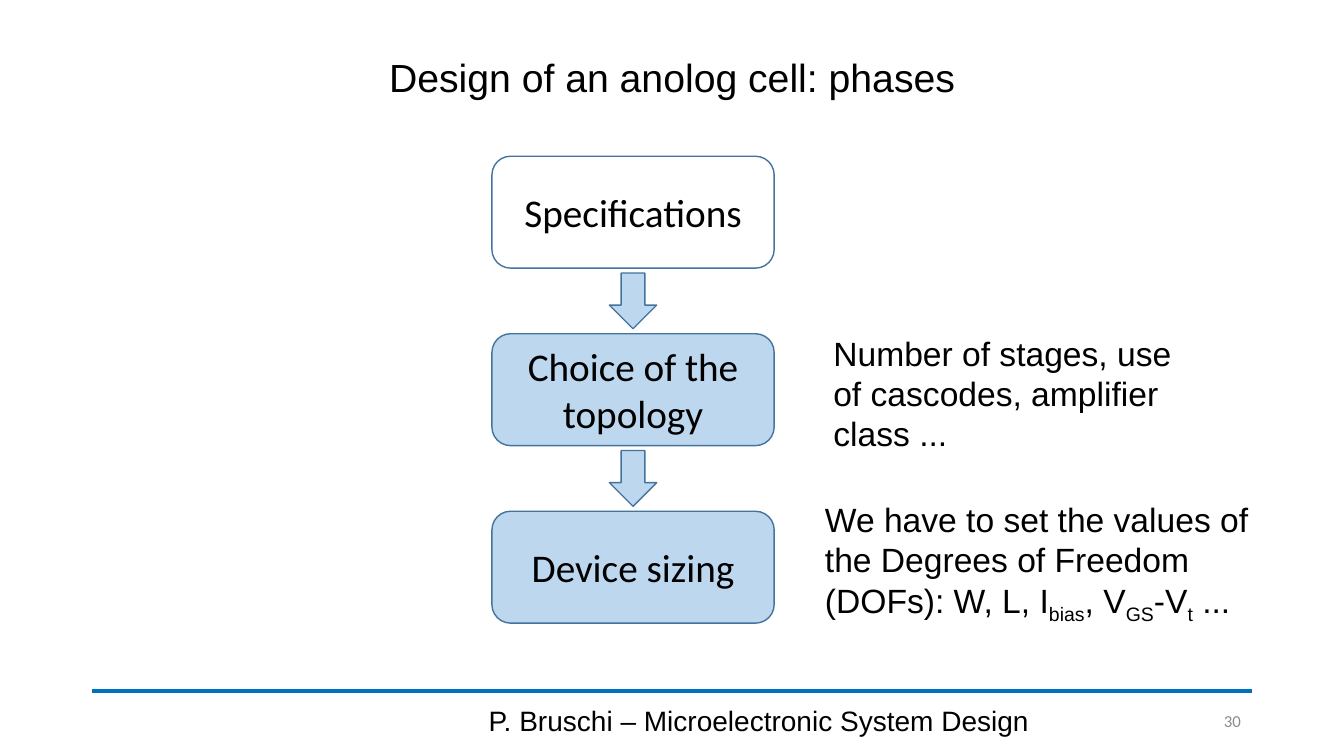
from pptx import Presentation
from pptx.dml.color import RGBColor
from pptx.enum.shapes import MSO_CONNECTOR, MSO_SHAPE
from pptx.enum.text import MSO_ANCHOR, PP_ALIGN
from pptx.oxml.ns import qn
from pptx.util import Pt
from lxml import etree

LEFT, CENTER, RIGHT = PP_ALIGN.LEFT, PP_ALIGN.CENTER, PP_ALIGN.RIGHT
TOP, MIDDLE = MSO_ANCHOR.TOP, MSO_ANCHOR.MIDDLE

COLORS = {"rule": "0070C0", "fill": "BDD7EE", "outline": "43739E",
          "text": "000000", "number": "8C8C8C"}

# Phase name, fill colour key
PHASES = [("Specifications", None),
          ("Choice of the topology", "fill"),
          ("Device sizing", "fill")]

# Box (left, top, width, height), runs (text, is subscript), size, font, colour, align, anchor
TEXTS = [
    ((66, 28.8, 828, 51.8), [("Design of an anolog cell: phases", False)],
     28, "Arial", "text", CENTER, MIDDLE),
    ((588.2, 234, 270.7, 94.3),
     [("Number of stages, use of cascodes, amplifier class ...", False)],
     24, "Arial", "text", LEFT, TOP),
    ((582.2, 352.8, 321.1, 94.3),
     [("We have to set the values of the Degrees of Freedom (DOFs): W, L, I", False),
      ("bias", True), (", V", False), ("GS", True), ("-V", False), ("t", True),
      (" ...", False)],
     24, "Arial", "text", LEFT, TOP),
    ((318.2, 500.4, 447.8, 28.8), [("P. Bruschi – Microelectronic System Design", False)],
     20, "Arial", "text", CENTER, MIDDLE),
    ((824.4, 500.4, 69.1, 28.8), [("30", False)],
     12, "Calibri", "number", RIGHT, MIDDLE),
]

BOX_LEFT, BOX_TOP, BOX_W, BOX_H = 351.4, 111.6, 201.6, 79.9
PITCH = 126.8
ARROW_W, ARROW_H = 33.8, 39.8
RULE_LEFT, RULE_RIGHT, RULE_Y = 66, 894, 493.7


def rgb(key):
    return RGBColor.from_string(COLORS[key])


def write(shape, runs, size, font, color, align, anchor):
    tf = shape.text_frame
    tf.word_wrap = True
    tf.vertical_anchor = anchor
    p = tf.paragraphs[0]
    p.alignment = align
    for text, subscript in runs:
        r = p.add_run()
        r.text = text
        r.font.size = Pt(size)
        r.font.name = font
        r.font.color.rgb = rgb(color)
        if subscript:
            r.font._element.set("baseline", "-25000")


def add_outlined(s, kind, left, top, width, height, fill):
    sp = s.shapes.add_shape(kind, Pt(left), Pt(top), Pt(width), Pt(height))
    sp.shadow.inherit = False
    if fill:
        sp.fill.solid()
        sp.fill.fore_color.rgb = rgb(fill)
    else:
        sp.fill.background()
    sp.line.color.rgb = rgb("outline")
    sp.line.width = Pt(1)
    return sp


def add_rule(s):
    rule = s.shapes.add_connector(MSO_CONNECTOR.STRAIGHT, Pt(RULE_LEFT), Pt(RULE_Y),
                                  Pt(RULE_RIGHT), Pt(RULE_Y))
    rule.line.color.rgb = rgb("rule")
    rule.line.width = Pt(2.75)
    etree.SubElement(rule._element.spPr, qn("a:effectLst"))


def add_phases(s):
    gap = PITCH - BOX_H
    arrow_left = BOX_LEFT + (BOX_W - ARROW_W) / 2
    for i, (name, fill) in enumerate(PHASES):
        top = BOX_TOP + i * PITCH
        box = add_outlined(s, MSO_SHAPE.ROUNDED_RECTANGLE, BOX_LEFT, top, BOX_W, BOX_H, fill)
        write(box, [(name, False)], 28, "Calibri", "text", CENTER, MIDDLE)
        if i < len(PHASES) - 1:
            arrow_top = top + BOX_H + (gap - ARROW_H) / 2
            add_outlined(s, MSO_SHAPE.DOWN_ARROW, arrow_left, arrow_top,
                         ARROW_W, ARROW_H, "fill")


def main():
    prs = Presentation()
    prs.slide_width, prs.slide_height = Pt(960), Pt(540)
    s = prs.slides.add_slide(prs.slide_layouts[6])
    add_rule(s)
    for box, *content in TEXTS:
        write(s.shapes.add_textbox(*map(Pt, box)), *content)
    add_phases(s)
    prs.save("out.pptx")


if __name__ == "__main__":
    main()
